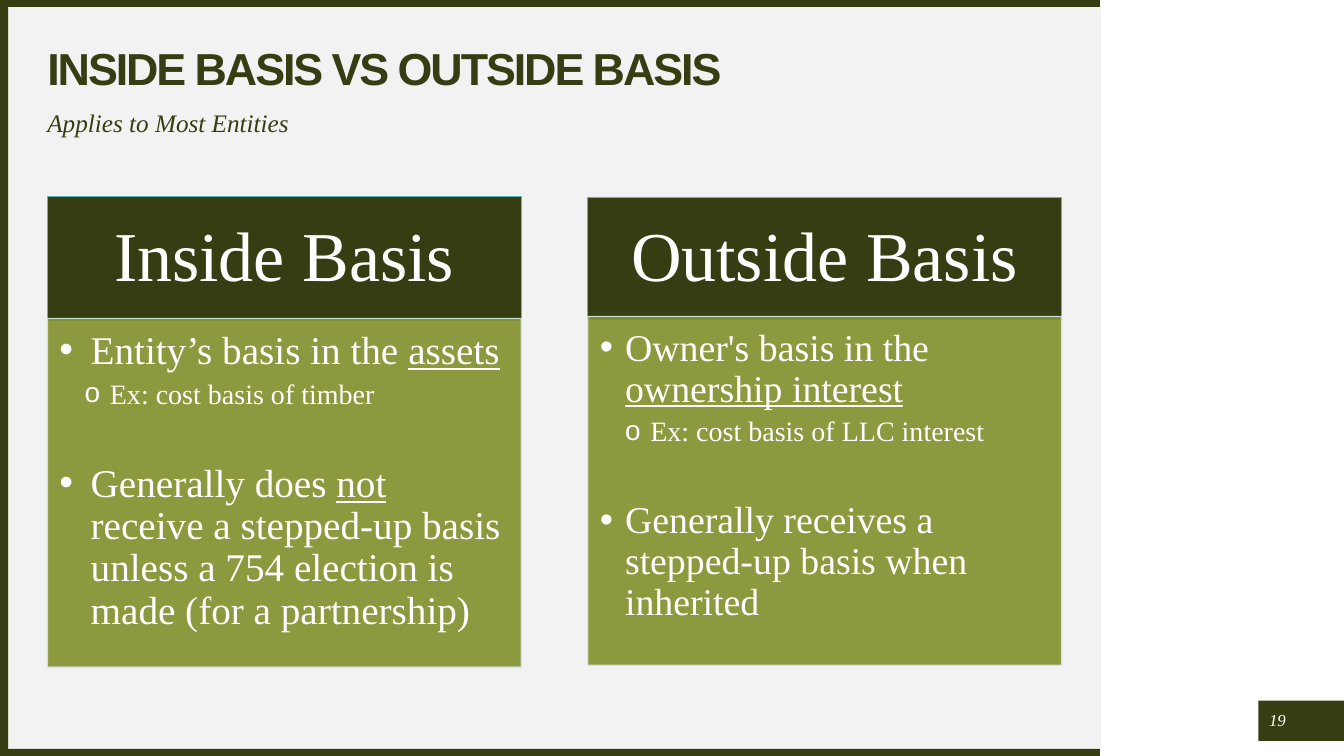
from dataclasses import dataclass

from lxml.etree import SubElement
from pptx import Presentation
from pptx.dml.color import RGBColor
from pptx.enum.shapes import MSO_SHAPE as Shape
from pptx.enum.text import MSO_ANCHOR as Anchor, PP_ALIGN as Align
from pptx.oxml.ns import qn
from pptx.util import Inches, Pt


@dataclass(frozen=True)
class Theme:
    """Colours, fonts and type sizes of the slide."""
    paper: str = "F2F2F2"
    dark: str = "373D12"
    olive: str = "82902B"
    teal: str = "5CB8B3"
    pale: str = "D2E6E5"
    white: str = "FFFFFF"
    sans: str = "Arial"
    serif: str = "Times New Roman"
    title: int = 32
    subtitle: int = 18
    heading: int = 50
    example: int = 20
    number: int = 12


class Builder:
    """Draws styled elements on the current page."""

    def __init__(self, page, theme):
        self.page, self.theme = page, theme

    def rect(self, left, top, width, height, fill, line=None, opacity=None):
        """Add a rectangle, optionally outlined and partly transparent."""
        box = self.page.shapes.add_shape(
            Shape.RECTANGLE, *map(Inches, (left, top, width, height)))
        box.shadow.inherit = False
        box.fill.solid()
        box.fill.fore_color.rgb = RGBColor.from_string(fill)
        if line:
            box.line.color.rgb = RGBColor.from_string(line)
            box.line.width = Pt(1)
        else:
            box.line.fill.background()
        if opacity:
            for color in box._element.spPr.iter(qn("a:srgbClr")):
                SubElement(color, qn("a:alpha"), val=str(opacity * 1000))
        return box

    def frame(self, box, margins=(0, 0, 0, 0), anchor=Anchor.TOP):
        """Set wrapping, margins and anchor, and return the text frame."""
        frame = box.text_frame
        frame.word_wrap = True
        frame.vertical_anchor = anchor
        (frame.margin_left, frame.margin_top,
         frame.margin_right, frame.margin_bottom) = map(Inches, margins)
        return frame

    def style(self, font, size, color, name=None):
        """Set the size, colour and typeface of a font."""
        font.size = Pt(size)
        font.name = name or self.theme.serif
        font.color.rgb = RGBColor.from_string(color)

    def label(self, place, text, size, color, name=None, anchor=Anchor.TOP,
              align=Align.LEFT, bold=False, italic=False, spacing=0):
        """Add a one-line text box."""
        box = self.page.shapes.add_textbox(*map(Inches, place))
        para = self.frame(box, anchor=anchor).paragraphs[0]
        para.text, para.alignment, para.line_spacing = text, align, 0.9
        span = para.runs[0]
        self.style(span.font, size, color, name)
        span.font.bold, span.font.italic = bold, italic
        if spacing:
            span._r.get_or_add_rPr().set("spc", str(spacing))

    def header(self, left, top, height, text):
        """Add the dark heading of a column."""
        box = self.rect(left, top, 4.7, height, self.theme.dark, self.theme.teal)
        para = self.frame(box, (0.39, 0.22, 0.39, 0.22), Anchor.MIDDLE).paragraphs[0]
        para.text, para.alignment, para.line_spacing = text, Align.CENTER, 0.9
        self.style(para.runs[0].font, self.theme.heading, self.theme.white)

    def bullet(self, para, text, size, mark, margin, hang, before=0, after=0):
        """Fill a bulleted paragraph, underlining parts between underscores."""
        para.alignment, para.line_spacing = Align.LEFT, 0.9
        para.space_before, para.space_after = Pt(before), Pt(after)
        props = para._p.get_or_add_pPr()
        props.set("marL", str(Inches(margin)))
        props.set("indent", str(Inches(-hang)))
        SubElement(props, qn("a:buFont"), typeface=self.theme.sans)
        SubElement(props, qn("a:buChar"), char=mark)
        for index, part in enumerate(text.split("_")):
            if part:
                span = para.add_run()
                span.text = part
                self.style(span.font, size, self.theme.white)
                span.font.underline = index % 2 == 1

    def panel(self, left, top, size, hang, first, example, last):
        """Add the olive panel with two points and an example."""
        box = self.rect(left, top, 4.7, 3.46, self.theme.olive, self.theme.pale, 90)
        frame = self.frame(box, (0.12, 0.12, 0.16, 0.17))
        self.bullet(frame.paragraphs[0], first, size, "•", hang, hang, after=5)
        self.bullet(frame.add_paragraph(), example, self.theme.example, "o",
                    0.5, 0.25, after=3)
        self.bullet(frame.add_paragraph(), last, size, "•", hang, hang, before=35)


COLUMNS = [
    ("Inside Basis", 1.95, 1.23, 3.16, 28, 0.31,
     "Entity’s basis in the _assets_", "Ex: cost basis of timber",
     "Generally does _not_ receive a stepped-up basis unless a 754 election is "
     "made (for a partnership)"),
    ("Outside Basis", 1.96, 1.21, 3.14, 27, 0.25,
     "Owner's basis in the _ownership interest_", "Ex: cost basis of LLC interest",
     "Generally receives a stepped-up basis when inherited"),
]


def main():
    """Build and save the slide."""
    deck = Presentation()
    deck.slide_width, deck.slide_height = Inches(13.33), Inches(7.5)
    theme = Theme()
    builder = Builder(deck.slides.add_slide(deck.slide_layouts[6]), theme)

    builder.rect(0.08, 0.07, 10.84, 7.36, theme.paper)
    for place in ((12.48, 6.95, 0.85, 0.4), (0, 7.43, 10.91, 0.07),
                  (0, 0, 10.91, 0.07), (0, 0.03, 0.08, 7.47)):
        builder.rect(*place, theme.dark)

    builder.label((0.47, 0.47, 10.06, 0.47), "INSIDE BASIS VS OUTSIDE BASIS",
                  theme.title, theme.dark, theme.sans, Anchor.MIDDLE,
                  bold=True, spacing=-150)
    builder.label((0.47, 1.1, 10.06, 0.39), "Applies to Most Entities",
                  theme.subtitle, theme.dark, italic=True)

    for index, (heading, top, height, panel_top, *content) in enumerate(COLUMNS):
        left = 0.47 + 5.36 * index
        builder.header(left, top, height, heading)
        builder.panel(left, panel_top, *content)

    builder.label((12.52, 7, 0.3, 0.3), "19", theme.number, theme.white,
                  anchor=Anchor.MIDDLE, align=Align.CENTER, italic=True)
    deck.save("out.pptx")


if __name__ == "__main__":
    main()
